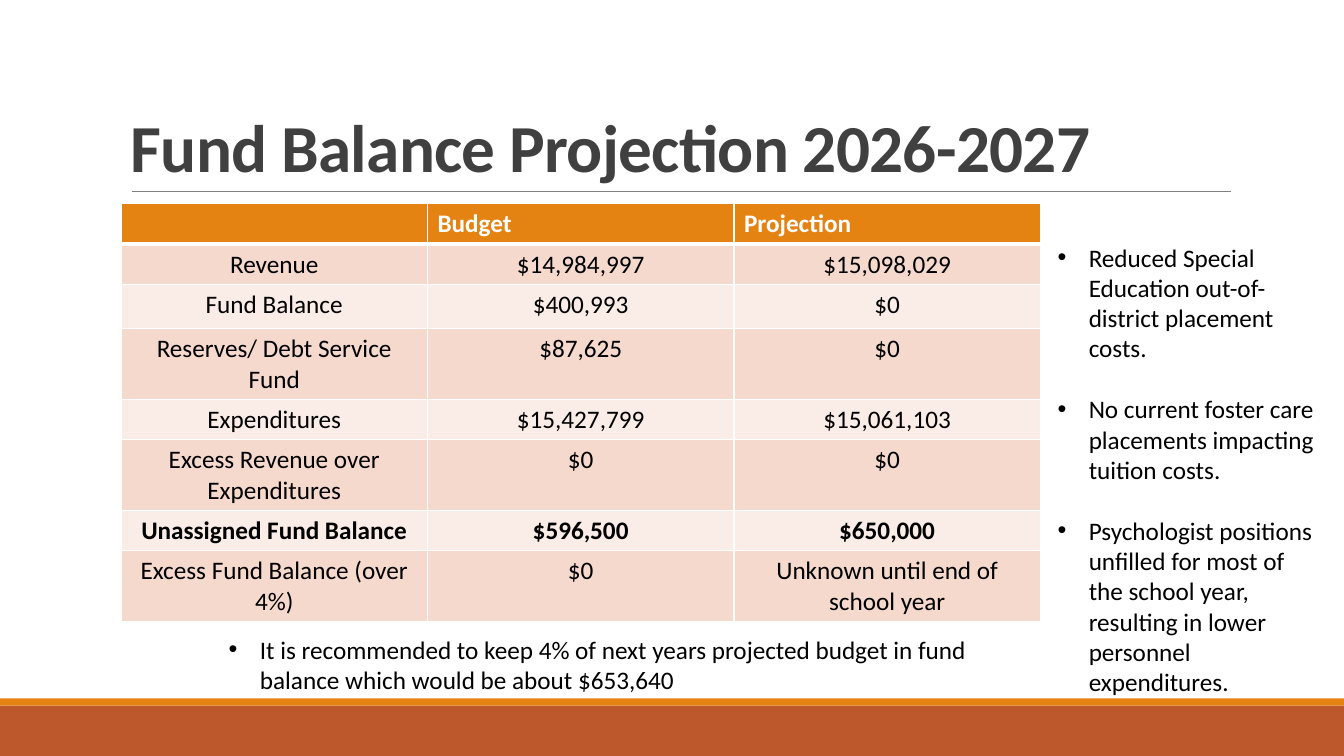
from dataclasses import dataclass

from lxml.etree import SubElement
from pptx import Presentation
from pptx.dml.color import RGBColor
from pptx.enum.shapes import MSO_CONNECTOR, MSO_SHAPE
from pptx.enum.text import MSO_ANCHOR, PP_ALIGN
from pptx.oxml.ns import qn
from pptx.util import Pt

EMU_PER_PX = 9144


@dataclass(frozen=True)
class Theme:
    font: str = "Calibri"
    title_size: int = 48
    body_size: int = 18
    title: str = "404040"
    body: str = "000000"
    white: str = "FFFFFF"
    rule: str = "808080"
    accent: str = "E48312"
    footer: str = "BD582C"
    bands: tuple = ("F5D9CC", "FAEDE7")


def px(length):
    return length * EMU_PER_PX


class SlideBuilder:
    def __init__(self, deck, theme):
        self.theme = theme
        self.page = deck.slides.add_slide(deck.slide_layouts[6])

    def style(self, para, size, color, bold=False):
        for span in para.runs:
            span.font.name = self.theme.font
            span.font.size = Pt(size)
            span.font.bold = bold
            span.font.color.rgb = RGBColor.from_string(color)

    def band(self, left, top, width, height, color):
        shape = self.page.shapes.add_shape(
            MSO_SHAPE.RECTANGLE, px(left), px(top), px(width), px(height))
        shape.shadow.inherit = False
        shape.fill.solid()
        shape.fill.fore_color.rgb = RGBColor.from_string(color)
        shape.line.fill.background()

    def rule(self, left, right, top):
        line = self.page.shapes.add_connector(
            MSO_CONNECTOR.STRAIGHT, px(left), px(top), px(right), px(top))
        line.line.color.rgb = RGBColor.from_string(self.theme.rule)
        line.line.width = Pt(0.5)
        SubElement(line._element.spPr, qn("a:effectLst"))

    def text_box(self, left, top, width, height):
        box = self.page.shapes.add_textbox(px(left), px(top), px(width), px(height))
        box.text_frame.word_wrap = True
        return box.text_frame

    def title(self, text, left, top, width, height):
        frame = self.text_box(left, top, width, height)
        frame.vertical_anchor = MSO_ANCHOR.BOTTOM
        frame.text = text
        para = frame.paragraphs[0]
        para.line_spacing = 0.85
        self.style(para, self.theme.title_size, self.theme.title, bold=True)
        para.runs[0].font._element.set("spc", "-50")

    def bullets(self, items, left, top, width, height):
        frame = self.text_box(left, top, width, height)
        for index, item in enumerate(items):
            para = frame.add_paragraph() if index else frame.paragraphs[0]
            para.text = item
            properties = para._p.get_or_add_pPr()
            properties.set("marL", str(px(31)))
            properties.set("indent", str(px(-31)))
            if index:
                para.space_before = Pt(22)
            SubElement(properties, qn("a:buFont"), typeface="Arial")
            SubElement(properties, qn("a:buChar"), char="•")
            self.style(para, self.theme.body_size, self.theme.body)

    def borders(self, cell, top, bottom):
        properties = cell._tc.get_or_add_tcPr()
        for side, points in (("L", 1), ("R", 1), ("T", top), ("B", bottom)):
            line = SubElement(properties, qn(f"a:ln{side}"), w=str(Pt(points)))
            fill = SubElement(line, qn("a:solidFill"))
            SubElement(fill, qn("a:srgbClr"), val=self.theme.white)

    def table(self, rows, heights, bold_row, left, top, column_width):
        columns = len(rows[0])
        table = self.page.shapes.add_table(
            len(rows), columns, px(left), px(top),
            px(column_width * columns), px(sum(heights))).table
        for column in table.columns:
            column.width = px(column_width)
        for row_index, (values, height) in enumerate(zip(rows, heights)):
            table.rows[row_index].height = px(height)
            header = row_index == 0
            fill = self.theme.accent if header else self.theme.bands[(row_index - 1) % 2]
            for column_index, value in enumerate(values):
                cell = table.cell(row_index, column_index)
                self.borders(cell, 3 if row_index == 1 else 1, 3 if header else 1)
                cell.fill.solid()
                cell.fill.fore_color.rgb = RGBColor.from_string(fill)
                cell.text_frame.text = value
                para = cell.text_frame.paragraphs[0]
                para.alignment = PP_ALIGN.LEFT if header else PP_ALIGN.CENTER
                self.style(para, self.theme.body_size,
                           self.theme.white if header else self.theme.body,
                           bold=header or row_index == bold_row)


FUND_ROWS = [
    ("", "Budget", "Projection"),
    ("Revenue", "$14,984,997", "$15,098,029"),
    ("Fund Balance", "$400,993", "$0"),
    ("Reserves/ Debt Service Fund", "$87,625", "$0"),
    ("Expenditures", "$15,427,799", "$15,061,103"),
    ("Excess Revenue over Expenditures", "$0", "$0"),
    ("Unassigned Fund Balance", "$596,500", "$650,000"),
    ("Excess Fund Balance (over 4%)", "$0", "Unknown until end of school year"),
]
ROW_HEIGHTS = [40, 40, 44, 70, 40, 70, 40, 70]
RECOMMENDATION = [
    "It is recommended to keep 4% of next years projected budget in fund "
    "balance which would be about $653,640",
]
REASONS = [
    "Reduced Special Education out-of-district placement costs.",
    "No current foster care placements impacting tuition costs.",
    "Psychologist positions unfilled for most of the school year, "
    "resulting in lower personnel expenditures.",
]


def main():
    deck = Presentation()
    deck.slide_width, deck.slide_height = px(1333), px(750)
    theme = Theme()
    slide = SlideBuilder(deck, theme)
    slide.band(0, 700, 1333, 50, theme.footer)
    slide.band(0, 693, 1333, 7, theme.accent)
    slide.rule(131, 1221, 190)
    slide.title("Fund Balance Projection 2026-2027", 120, 31, 1100, 159)
    slide.table(FUND_ROWS, ROW_HEIGHTS, 6, 120, 202, 304)
    slide.bullets(RECOMMENDATION, 217, 624, 797, 71)
    slide.bullets(REASONS, 1039, 235, 282, 458)
    deck.save("out.pptx")


if __name__ == "__main__":
    main()
